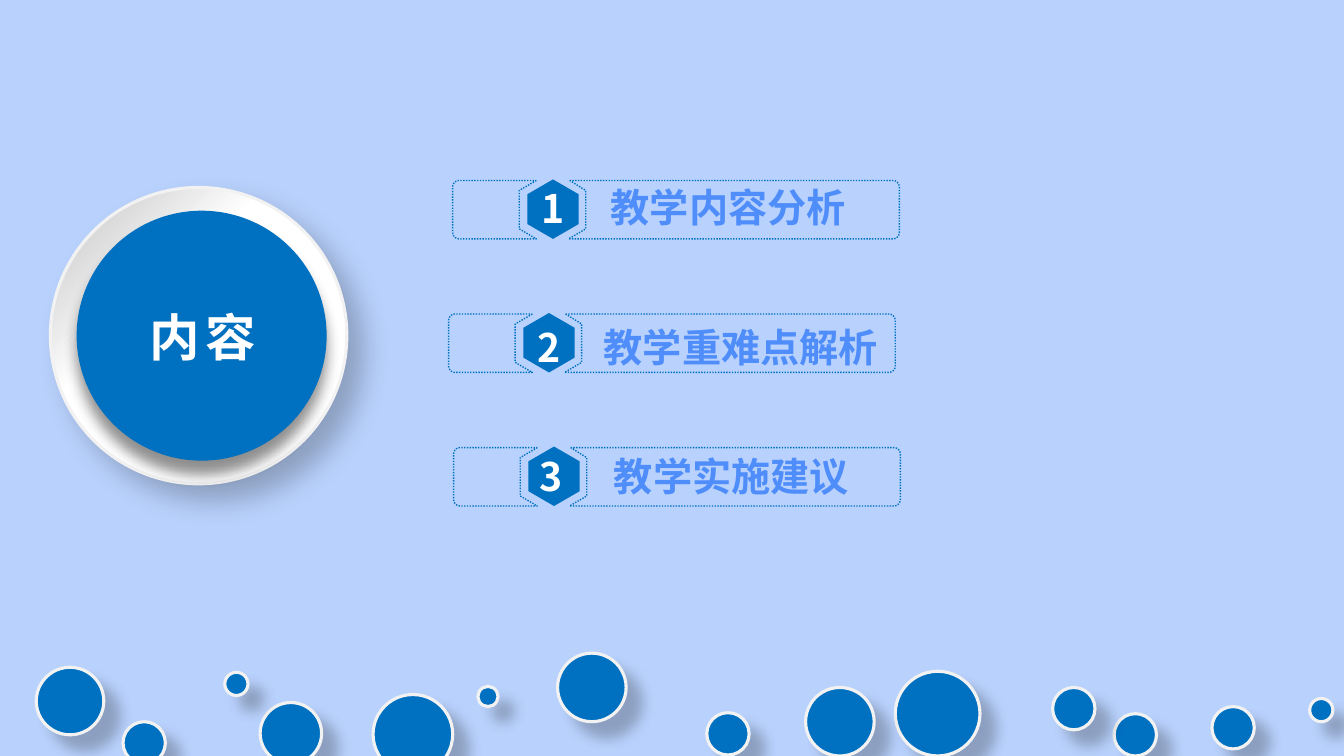
from math import cos, radians, sin

from lxml import etree
from pptx import Presentation
from pptx import util as u
from pptx.dml import color
from pptx.enum import dml, shapes, text
from pptx.oxml import ns

FONT = "Noto Sans CJK SC"
BLUE, LABEL_BLUE, WHITE, RIM = "0070C0", "4F8EFA", "FFFFFF", "F2F2F2"
BACKGROUND = "B9D2FD"

# The grid has square cells, 75 rows on the height of the slide.
ROWS = 75
CELL = u.Inches(7.5) / ROWS
FIRST_ROW, ROW_PITCH = 17.9, 13.25

# Left and top of a bubble, and its diameter
BUBBLES = [
    (25.8, 69.7, 6.1), (55.3, 64.8, 6.8), (88.8, 66.6, 8.4), (70.1, 70.7, 4.2),
    (3.6, 66.2, 6.7), (37, 68.9, 7.9), (79.9, 68.2, 6.8), (22.3, 66.7, 2.3),
    (12.2, 71.6, 4.2), (110.5, 70.8, 4.2), (47.4, 68.1, 2), (129.9, 69.3, 2.3),
    (104.4, 68.2, 4.2), (120.2, 70.1, 4.2),
]
# Label, left of the frame, then offsets of the number and of the label
TOPICS = [
    ("教学内容分析", 44.9, (7.8, -0.1), (14.7, -0.2)),
    ("教学重难点解析", 44.5, (7.8, 0.4), (14.4, 0.4)),
    ("教学实施建议", 45, (7.5, 0), (14.9, 0)),
]


def cells(count):
    return u.Emu(round(count * CELL))


def rgb(value):
    return color.RGBColor.from_string(value)


def add_shadow(effects, alpha, blur, distance, angle):
    """Put an outer shadow in an effect list; lengths are points."""
    shadow = etree.SubElement(
        effects, ns.qn("a:outerShdw"), blurRad=str(u.Pt(blur)),
        dist=str(u.Pt(distance)), dir=str(angle * 60000), algn="t", rotWithShape="0")
    black = etree.SubElement(shadow, ns.qn("a:srgbClr"), val="000000")
    etree.SubElement(black, ns.qn("a:alpha"), val=str(alpha * 1000))


def add_circle(slide, left, top, diameter, shadow, rim=True):
    circle = slide.shapes.add_shape(
        shapes.MSO_SHAPE.OVAL, *map(cells, (left, top, diameter, diameter)))
    circle.fill.solid()
    circle.fill.fore_color.rgb = rgb(BLUE)
    if rim:
        circle.line.color.rgb = rgb(RIM)
        circle.line.width = u.Pt(2.25)
    else:
        circle.line.fill.background()
    circle.shadow.inherit = False
    add_shadow(circle.element.spPr.find(ns.qn("a:effectLst")), *shadow)
    return circle


def add_outline(parent, *contours):
    """Build one freeform from closed contours given in cells."""
    contours = [[(cells(x), cells(y)) for x, y in points] for points in contours]
    builder = parent.shapes.build_freeform(*contours[0][0], scale=1.0)
    for number, points in enumerate(contours):
        if number:
            builder.move_to(*points[0])
        builder.add_line_segments(points[1:], close=True)
    outline = builder.convert_to_shape()
    outline.shadow.inherit = False
    return outline


def corner(x, y, start, radius=0.65):
    """Points of a quarter circle around x, y, clockwise from an angle."""
    angles = [radians(start + step * 90 / 8) for step in range(9)]
    return [(x + radius * cos(angle), y + radius * sin(angle)) for angle in angles]


def add_frame(parent, left, top, width=44.3, height=5.8, radius=0.65):
    """Draw the dotted box that opens around the hexagon."""
    right, bottom = left + width, top + height
    upper, lower = top + radius, bottom - radius
    left_part = [(left + 8.3, top), (left + 6.6, top + 1), (left + 6.6, bottom - 1),
                 (left + 8.3, bottom), *corner(left + radius, lower, 90),
                 *corner(left + radius, upper, 180)]
    right_part = [(left + 11.6, top), *corner(right - radius, upper, 270),
                  *corner(right - radius, lower, 0), (left + 11.5, bottom),
                  (left + 13.2, bottom - 1), (left + 13.2, top + 1)]
    frame = add_outline(parent, left_part, right_part)
    frame.fill.background()
    frame.line.color.rgb = rgb(BLUE)
    frame.line.width = u.Pt(1)
    frame.line.dash_style = dml.MSO_LINE.ROUND_DOT


def add_hexagon(parent, left, top, width=5.1, height=5.9):
    middle, right = left + width / 2, left + width
    upper, lower = top + height / 4, top + height * 3 / 4
    hexagon = add_outline(parent, [
        (middle, top), (right, upper), (right, lower),
        (middle, top + height), (left, lower), (left, upper)])
    hexagon.fill.solid()
    hexagon.fill.fore_color.rgb = rgb(BLUE)
    hexagon.line.fill.background()


def write(shape, words, size, hex_color, wrap=True, shadow=None):
    frame = shape.text_frame
    frame.text = words
    frame.word_wrap = wrap
    frame.auto_size = text.MSO_AUTO_SIZE.SHAPE_TO_FIT_TEXT
    frame.vertical_anchor = text.MSO_ANCHOR.TOP
    paragraph = frame.paragraphs[0]
    paragraph.alignment = text.PP_ALIGN.LEFT
    paragraph.line_spacing = 1.0
    run = paragraph.runs[0]
    run.font.size = u.Pt(size)
    run.font.bold = True
    run.font.color.rgb = rgb(hex_color)
    properties = run.font.fill and run._r.get_or_add_rPr()
    if shadow:
        add_shadow(etree.SubElement(properties, ns.qn("a:effectLst")), *shadow)
    run.font.name = FONT
    etree.SubElement(properties, ns.qn("a:ea"), typeface=FONT)
    return properties


def add_text(parent, words, left, top, width, hex_color):
    box = parent.shapes.add_textbox(*map(cells, (left, top, width, 5.7)))
    write(box, words, 28, hex_color)


def add_topic(slide, number, label, left, number_offset, label_offset):
    top = FIRST_ROW + (number - 1) * ROW_PITCH
    group = slide.shapes.add_group_shape()
    add_frame(group, left, top)
    add_hexagon(group, left + 7.4, top - 0.1)
    add_text(group, str(number), left + number_offset[0], top + number_offset[1],
             6.1, WHITE)
    add_text(slide, label, left + label_offset[0], top + label_offset[1],
             30.2, LABEL_BLUE)


def add_title_disc(slide):
    ring = add_circle(slide, 5, 18.6, 29.4, (23, 20, 15, 45))
    ring.fill.gradient()
    ring.fill.gradient_angle = 315
    for stop, position, shade in zip(ring.fill.gradient_stops, (0, 0.37), ("BFBFBF", WHITE)):
        stop.position = position
        stop.color.rgb = rgb(shade)
    add_circle(slide, 7.6, 20.9, 24.8, (43, 10, 10, 90), rim=False)

    title = slide.shapes.title
    title.left, title.top, title.width, title.height = map(cells, (13.8, 29.9, 13.2, 7.1))
    write(title, "内容", 36, WHITE, wrap=False, shadow=(40, 5, 8, 90)).set("spc", "400")
    title.element.getparent().append(title.element)  # in front of the disc


def main():
    presentation = Presentation()
    presentation.slide_width = u.Inches(13.33)
    presentation.slide_height = cells(ROWS)
    slide = presentation.slides.add_slide(presentation.slide_layouts[5])
    slide.background.fill.solid()
    slide.background.fill.fore_color.rgb = rgb(BACKGROUND)

    for bubble in BUBBLES:
        add_circle(slide, *bubble, shadow=(23, 10, 15, 45))
    add_title_disc(slide)
    for number, topic in enumerate(TOPICS, 1):
        add_topic(slide, number, *topic)
    presentation.save("out.pptx")


if __name__ == "__main__":
    main()
